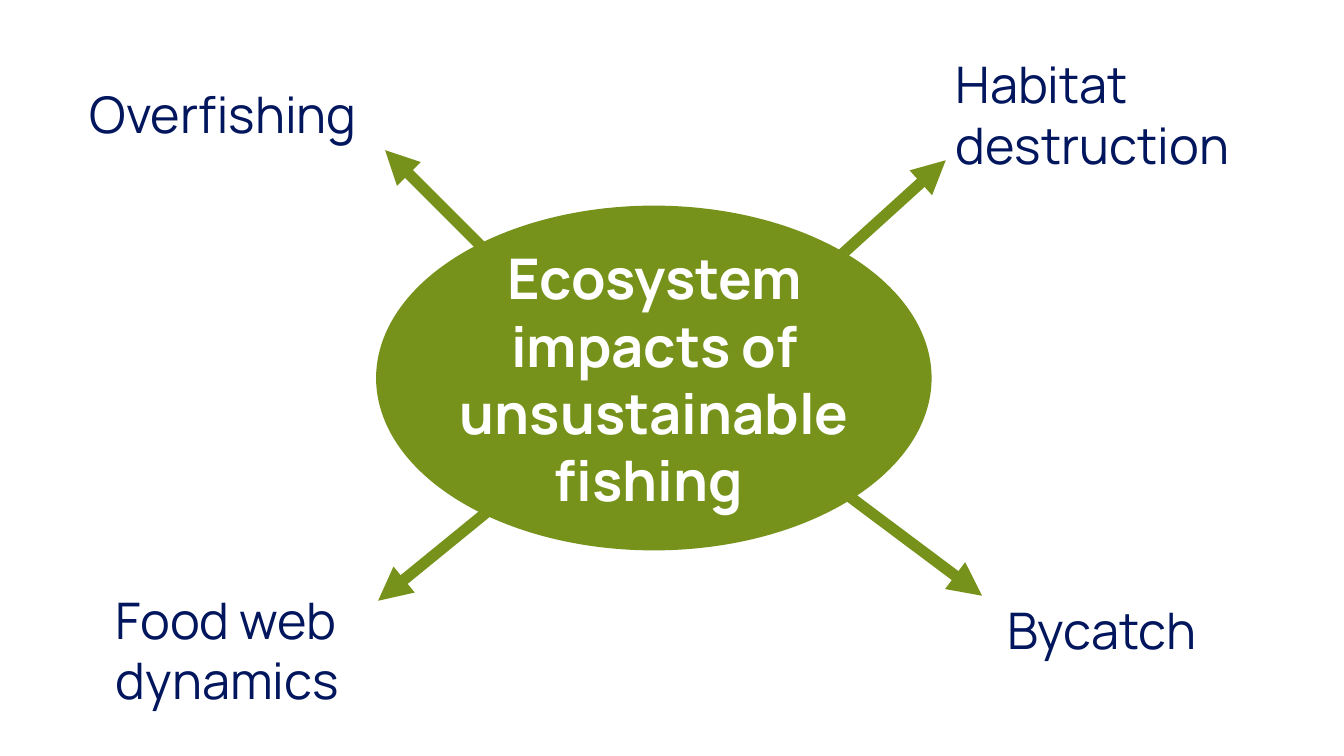
import pptx
import pptx.util
import pptx.dml.color
import pptx.enum.shapes
import pptx.enum.text
import pptx.oxml.ns
import lxml.etree

Inches, Pt = pptx.util.Inches, pptx.util.Pt
COLORS = {"green": "76921A", "navy": "02165E", "white": "FFFFFF"}
FONT = "Manrope"

HUB = "Ecosystem impacts of unsustainable fishing "
HUB_BOX = (3.82, 2.37, 5.34, 2.79)
OVAL = (3.73, 2.04, 5.51, 3.42)
LABEL_W, LINE_H, PAD = 3.7, 0.6, 0.11

# label, left, top, lines, arrow start, arrow tip
IMPACTS = [
    ("Overfishing", 0.79, 0.78, 1, (4.89, 2.56), (3.82, 1.49)),
    ("Habitat destruction", 9.38, 0.48, 2, (8.31, 2.56), (9.38, 1.59)),
    ("Food web dynamics", 1.05, 5.79, 2, (4.89, 5.03), (3.75, 5.96)),
    ("Bycatch", 9.89, 5.89, 1, (8.31, 4.84), (9.74, 5.91)),
]


def color(name):
    return pptx.dml.color.RGBColor.from_string(COLORS[name])


def place(box):
    return [Inches(v) for v in box]


def write(shape, text, size, tint, bold, align):
    frame = shape.text_frame
    frame.text = text
    frame.word_wrap = True
    frame.auto_size = pptx.enum.text.MSO_AUTO_SIZE.NONE
    frame.vertical_anchor = pptx.enum.text.MSO_ANCHOR.TOP
    para = frame.paragraphs[0]
    para.alignment = align
    font = para.font
    font.name, font.size, font.bold = FONT, Pt(size), bold
    font.color.rgb = color(tint)


def add_arrow(slide, start, tip):
    kind = pptx.enum.shapes.MSO_CONNECTOR.STRAIGHT
    arrow = slide.shapes.add_connector(kind, *place(start + tip))
    arrow.line.color.rgb = color("green")
    arrow.line.width = Pt(8)
    qn = pptx.oxml.ns.qn
    line = arrow.line._get_or_add_ln()
    lxml.etree.SubElement(line, qn("a:tailEnd"), type="triangle")
    lxml.etree.SubElement(arrow._element.spPr, qn("a:effectLst"))


def main():
    deck = pptx.Presentation()
    deck.slide_width, deck.slide_height = Inches(13.33), Inches(7.5)
    slide = deck.slides.add_slide(deck.slide_layouts[5])
    align = pptx.enum.text.PP_ALIGN

    oval = slide.shapes.add_shape(
        pptx.enum.shapes.MSO_SHAPE.OVAL, *place(OVAL))
    oval.shadow.inherit = False
    oval.fill.solid()
    oval.fill.fore_color.rgb = color("green")
    oval.line.fill.background()

    hub = slide.shapes.title
    hub.left, hub.top, hub.width, hub.height = place(HUB_BOX)
    write(hub, HUB, 40, "white", True, align.CENTER)
    oval._element.addnext(hub._element)  # title in front of the oval

    for text, left, top, lines, start, tip in IMPACTS:
        add_arrow(slide, start, tip)
        box = (left, top, LABEL_W, lines * LINE_H + PAD)
        label = slide.shapes.add_textbox(*place(box))
        write(label, text, 36, "navy", False, align.LEFT)

    deck.save("out.pptx")


if __name__ == "__main__":
    main()
